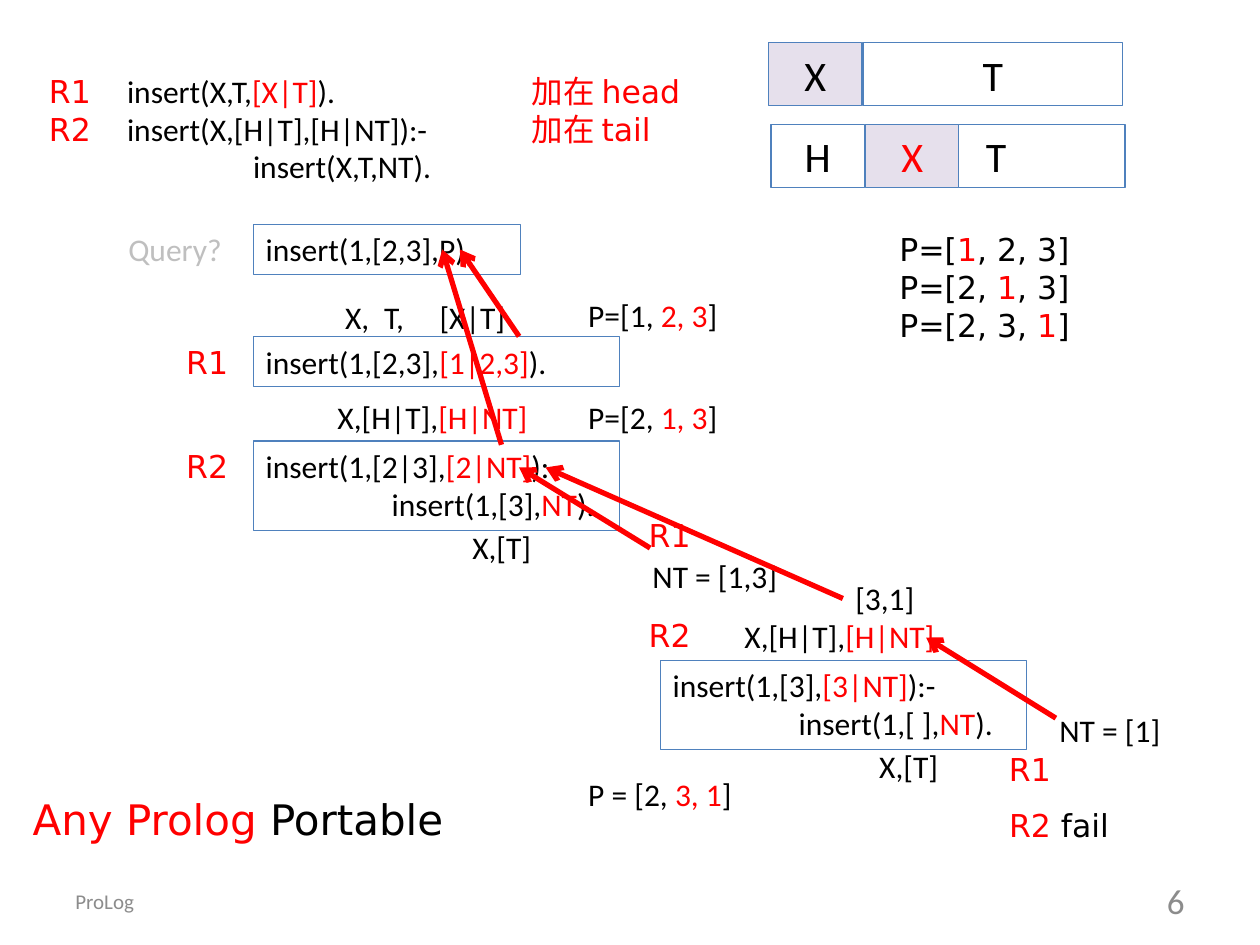
from lxml import etree
from pptx import Presentation
from pptx.dml.color import RGBColor
from pptx.enum.shapes import MSO_CONNECTOR, MSO_SHAPE
from pptx.enum.text import MSO_ANCHOR, MSO_AUTO_SIZE, PP_ALIGN
from pptx.oxml.ns import qn
from pptx.util import Inches, Pt

BLACK = RGBColor(0x00, 0x00, 0x00)
RED = RGBColor(0xFF, 0x00, 0x00)
BLUE = RGBColor(0x4F, 0x81, 0xBD)
LILAC = RGBColor(0xE6, 0xE0, 0xEC)
SILVER = RGBColor(0xBF, 0xBF, 0xBF)
GRAY = RGBColor(0x8C, 0x8C, 0x8C)
BODY_FONT = "Calibri"
LABEL_FONT = "DejaVu Sans"
LEFT, CENTER, RIGHT = PP_ALIGN.LEFT, PP_ALIGN.CENTER, PP_ALIGN.RIGHT
TOP, MIDDLE = MSO_ANCHOR.TOP, MSO_ANCHOR.MIDDLE
RECTANGLE = MSO_SHAPE.RECTANGLE
STRAIGHT = MSO_CONNECTOR.STRAIGHT
GROW, FIXED = MSO_AUTO_SIZE.SHAPE_TO_FIT_TEXT, MSO_AUTO_SIZE.NONE
LINE_HEIGHT = 0.4
TWO_LINES = 0.71
THREE_LINES = 1.01
CELL_WIDTH, CELL_HEIGHT = 0.74, 0.5
CALL_WIDTH = 2.91


def set_tab_stops(para, *stops):
    tabs = etree.SubElement(para._p.get_or_add_pPr(), qn("a:tabLst"))
    for stop in stops:
        etree.SubElement(tabs, qn("a:tab"), pos=str(Inches(stop)), algn="l")


def write(box, text, font=BODY_FONT, size=18, color=BLACK, align=LEFT):
    """Fill a shape with lines of text; parts between asterisks are red."""
    frame = box.text_frame
    frame.vertical_anchor = TOP
    frame.word_wrap = True
    frame.auto_size = GROW
    for number, line in enumerate(text.split("\n")):
        para = frame.add_paragraph() if number else frame.paragraphs[0]
        para.alignment = align
        if line.startswith("\t"):
            set_tab_stops(para, 1)
        for index, part in enumerate(line.split("*")):
            if part:
                span = para.add_run()
                span.text = part
                span.font.name = font
                span.font.size = Pt(size)
                span.font.color.rgb = RED if index % 2 else color


def add_text(page, left, top, width, height, text, wrap=True, **style):
    box = page.shapes.add_textbox(Inches(left), Inches(top), Inches(width), Inches(height))
    write(box, text, **style)
    box.text_frame.word_wrap = wrap
    return box


def add_label(page, left, top, text, width=0.54, height=LINE_HEIGHT):
    add_text(page, left, top, width, height, text, wrap=False, font=LABEL_FONT)


def add_framed(page, left, top, width, height, text, fill=None, **style):
    box = page.shapes.add_shape(
        RECTANGLE, Inches(left), Inches(top), Inches(width), Inches(height))
    box.shadow.inherit = False
    box.line.color.rgb = BLUE
    box.line.width = Pt(0.75)
    if fill is None:
        box.fill.background()
    else:
        box.fill.solid()
        box.fill.fore_color.rgb = fill
    write(box, text, **style)


def add_arrow(page, x1, y1, x2, y2):
    arrow = page.shapes.add_connector(
        STRAIGHT, Inches(x1), Inches(y1), Inches(x2), Inches(y2))
    arrow.line.color.rgb = RED
    arrow.line.width = Pt(3)
    etree.SubElement(arrow.line._get_or_add_ln(), qn("a:tailEnd"), type="arrow")
    etree.SubElement(arrow._element.spPr, qn("a:effectLst"))


def add_rules(page, left, top):
    add_label(page, left, top, "*R1*\n*R2*", height=TWO_LINES)
    add_text(page, left + 0.62, top, 2.99, THREE_LINES,
             "insert(X,T,*[X|T]*).\ninsert(X,[H|T],[H|NT]):-\n\tinsert(X,T,NT).")
    add_text(page, left + 3.83, top, 1.42, TWO_LINES,
             "*加在 head*\n*加在 tail*", font=LABEL_FONT)


def add_list_diagrams(page, left, top):
    """Show X placed before the tail, then after the head."""
    rows = [
        (0, 0, CELL_WIDTH, "X", LILAC),
        (0.75, 0, 2.06, "T", None),
        (0.02, 0.65, CELL_WIDTH, "H", None),
        (0.78, 0.65, 2.05, "T", None),
        (0.77, 0.65, CELL_WIDTH, "*X*", LILAC),
    ]
    for dx, dy, width, text, fill in rows:
        add_framed(page, left + dx, top + dy, width, CELL_HEIGHT, text,
                   fill=fill, size=24, align=CENTER)


def add_recursive_call(page, left, top, text):
    """Frame a two-line R2 call between its argument patterns."""
    add_text(page, left + 0.57, top - 0.39, 1.72, LINE_HEIGHT, "X,[H|T],*[H|NT]*", wrap=False)
    add_framed(page, left, top, CALL_WIDTH, TWO_LINES, text)
    add_text(page, left + 1.64, top + 0.64, 0.67, LINE_HEIGHT, "X,[T]", wrap=False)


def add_query_trace(page, left, top):
    call_left = left + 1.09
    add_text(page, left, top, 1.01, LINE_HEIGHT, "Query?", wrap=False, color=SILVER)
    add_framed(page, call_left, top, 2.12, LINE_HEIGHT, "insert(1,[2,3],P).")
    pattern = add_text(page, left + 1.72, top + 0.54, 1.49, LINE_HEIGHT, "X,\tT,\t[X|T]")
    set_tab_stops(pattern.text_frame.paragraphs[0], 0.31, 0.75)
    add_label(page, left + 0.46, top + 0.89, "*R1*")
    add_framed(page, call_left, top + 0.89, CALL_WIDTH, LINE_HEIGHT,
               "insert(1,[2,3],*[1|2,3]*).")
    add_label(page, left + 0.46, top + 1.72, "*R2*")
    add_recursive_call(page, call_left, top + 1.72,
                       "insert(1,[2|3],*[2|NT]*):-\n\tinsert(1,[3],*NT*).")
    for dy, result in ((0.52, "P=[1, *2, 3*]"), (1.33, "P=[2, *1, 3*]"),
                       (4.32, "P = [2, *3, 1*]")):
        add_text(page, left + 3.65, top + dy, 1.58, LINE_HEIGHT, result)
    add_arrow(page, left + 3.2, top + 0.89, left + 2.73, top + 0.2)
    add_arrow(page, left + 3.06, top + 1.75, left + 2.59, top + 0.2)


def add_nested_trace(page, left, top):
    add_label(page, left, top, "*R1*")
    add_text(page, left + 0.03, top + 0.32, 1.41, LINE_HEIGHT, "NT = [1,3]")
    add_label(page, left, top + 0.79, "*R2*")
    add_text(page, left + 1.64, top + 0.5, 0.7, LINE_HEIGHT, "[3,1]")
    add_recursive_call(page, left + 0.19, top + 1.19,
                       "insert(1,[3],*[3|NT]*):-\n\tinsert(1,[ ],*NT*).")
    add_text(page, left + 3.26, top + 1.54, 1.19, LINE_HEIGHT, "NT = [1]")
    add_label(page, left + 2.86, top + 1.85, "*R1*")
    add_label(page, left + 2.86, top + 2.3, "*R2 *fail", width=1.11)
    for x1, y1, x2, y2 in ((0.11, 0.3, -0.93, -0.34), (3.33, 1.65, 2.3, 1.01),
                           (1.64, 0.7, -0.72, -0.34)):
        add_arrow(page, left + x1, top + y1, left + x2, top + y2)


def add_answers(page, left, top):
    add_text(page, left, top, 1.66, THREE_LINES,
             "P=[*1*, 2, 3]\nP=[2, *1*, 3]\nP=[2, 3, *1*]", font=LABEL_FONT)


def add_footer(page, left, top):
    add_text(page, left - 0.34, top - 0.7, 3.59, CELL_HEIGHT, "*Any Prolog *Portable",
             wrap=False, font=LABEL_FONT, size=24)
    for dx, text, size, align in ((0, "ProLog", 12, LEFT), (6.67, "6", 20, RIGHT)):
        box = add_text(page, left + dx, top, 2.33, LINE_HEIGHT, text,
                       size=size, color=GRAY, align=align)
        box.text_frame.auto_size = FIXED
        box.text_frame.vertical_anchor = MIDDLE


def main():
    deck = Presentation()
    deck.slide_width, deck.slide_height = Inches(10), Inches(7.5)
    page = deck.slides.add_slide(deck.slide_layouts[6])
    add_rules(page, 0.29, 0.52)
    add_list_diagrams(page, 6.1, 0.34)
    add_query_trace(page, 0.92, 1.78)
    add_nested_trace(page, 5.05, 4.05)
    add_answers(page, 7.04, 1.78)
    add_footer(page, 0.5, 6.95)
    deck.save("out.pptx")


if __name__ == "__main__":
    main()
